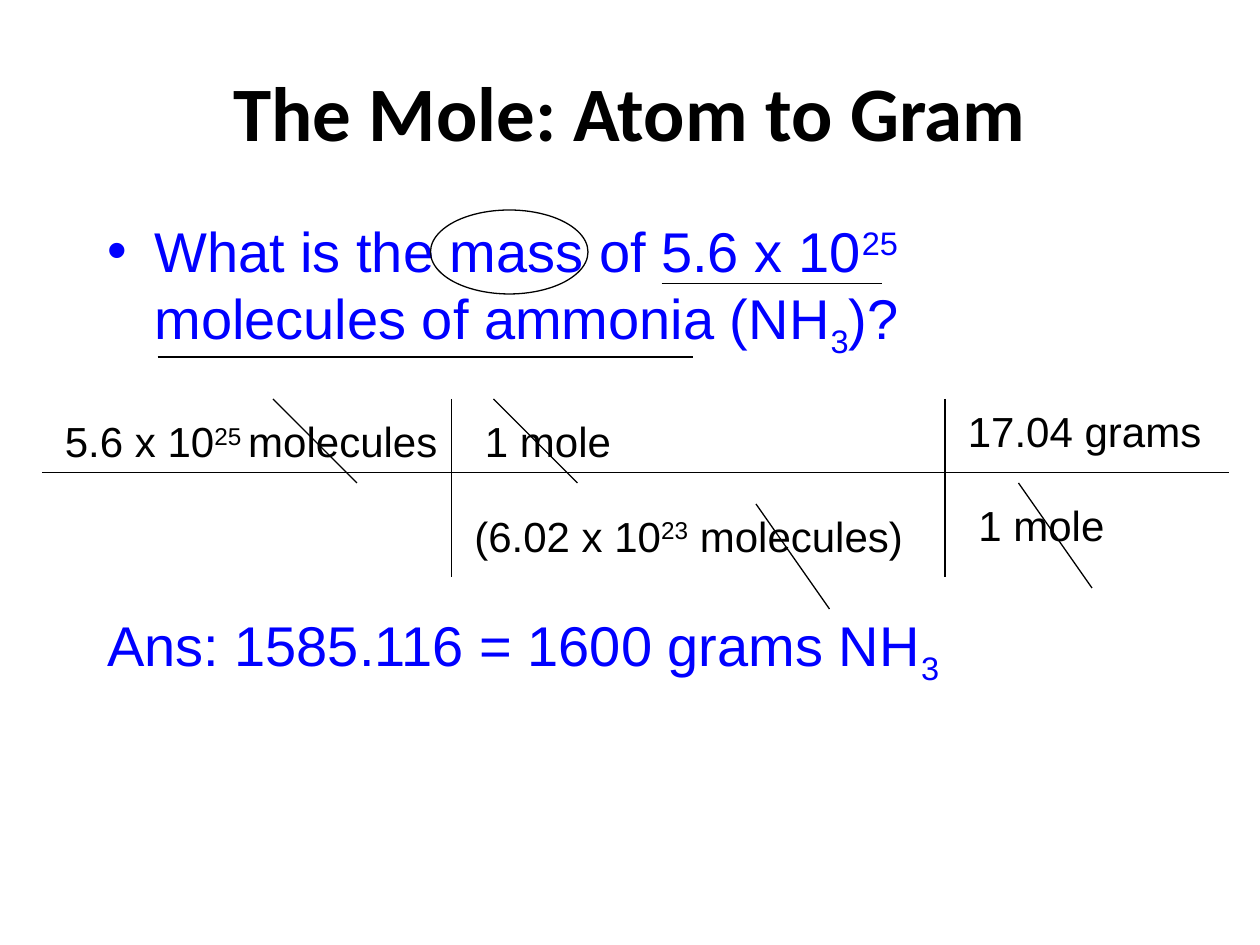
from lxml import etree
from pptx import Presentation
from pptx.dml.color import RGBColor
from pptx.enum.shapes import MSO_CONNECTOR, MSO_SHAPE
from pptx.enum.text import MSO_ANCHOR, MSO_AUTO_SIZE, PP_ALIGN
from pptx.oxml.ns import qn
from pptx.util import Pt

STRAIGHT = MSO_CONNECTOR.STRAIGHT
OVAL = MSO_SHAPE.OVAL
MIDDLE = MSO_ANCHOR.MIDDLE
CENTER = PP_ALIGN.CENTER
NO_AUTOFIT = MSO_AUTO_SIZE.NONE
GROW = MSO_AUTO_SIZE.SHAPE_TO_FIT_TEXT
BLACK, BLUE = "000000", "0000FF"
SUPERSCRIPT, SUBSCRIPT = "30000", "-25000"


def color(hex_string):
    return RGBColor.from_string(hex_string)


def add_runs(paragraph, pieces, size, hex_string):
    """Write (text, baseline) pieces as Arial runs."""
    for text, baseline in pieces:
        run = paragraph.add_run()
        run.text = text
        run.font.name = "Arial"
        run.font.size = Pt(size)
        run.font.color.rgb = color(hex_string)
        if baseline:
            run.font._element.set("baseline", baseline)


presentation = Presentation()
presentation.slide_width, presentation.slide_height = Pt(720), Pt(540)
slide = presentation.slides.add_slide(presentation.slide_layouts[1])

# Title
title = slide.shapes.title
title.left, title.top, title.width, title.height = Pt(54), Pt(18), Pt(612), Pt(90)
title.text_frame.text = "The Mole: Atom to Gram"
title.text_frame.vertical_anchor = MIDDLE
paragraph = title.text_frame.paragraphs[0]
paragraph.alignment = CENTER
font = paragraph.runs[0].font
font.name, font.size, font.bold = "Calibri", Pt(44), True
font.color.rgb = color(BLACK)

# Question and answer
body = slide.placeholders[1]
body.left, body.top, body.width, body.height = Pt(54), Pt(120), Pt(612), Pt(360)
body.text_frame.auto_size = NO_AUTOFIT
question = body.text_frame.paragraphs[0]
add_runs(question, [("What is the mass of 5.6 x 10", None), ("25", SUPERSCRIPT),
                    (" molecules of ammonia (NH", None), ("3", SUBSCRIPT),
                    (")?", None)], 32, BLUE)
answer = body.text_frame.add_paragraph()
add_runs(answer, [("Ans: 1585.116 = 1600 grams NH", None), ("3", SUBSCRIPT)], 32, BLUE)
answer.space_before = Pt(143)
properties = answer._p.get_or_add_pPr()
properties.set("marL", "0")
properties.set("indent", "0")
etree.SubElement(properties, qn("a:buNone"))

# Conversion factors: left, top, width, pieces
factors = [
    (30, 234, 264, [("5.6 x 10", None), ("25 ", SUPERSCRIPT), ("molecules", None)]),
    (264, 288, 318, [("(6.02 x 10", None), ("23", SUPERSCRIPT), (" molecules)", None)]),
    (270, 234, 264, [("1 mole", None)]),
    (552, 282, 264, [("1 mole", None)]),
    (546, 228, 264, [("17.04 grams", None)]),
]
for left, top, width, pieces in factors:
    box = slide.shapes.add_textbox(Pt(left), Pt(top), Pt(width), Pt(36.7))
    box.text_frame.word_wrap = True
    box.text_frame.auto_size = GROW
    add_runs(box.text_frame.paragraphs[0], pieces, 24, BLACK)

# Circle around the wanted quantity
circle = slide.shapes.add_shape(OVAL, Pt(246), Pt(120), Pt(90), Pt(48))
circle.shadow.inherit = False
circle.fill.background()
circle.line.color.rgb = color(BLACK)
circle.line.width = Pt(0.75)

# Lines: start x, start y, end x, end y
grid_lines = [(24, 270, 702, 270), (258, 228, 258, 330), (540, 228, 540, 330)]
underlines = [(378, 162, 504, 162), (90, 204, 396, 204)]
unit_strikes = [(156, 228, 204, 276), (282, 228, 330, 276),
                (432, 288, 474, 348), (582, 276, 624, 336)]
for ends in grid_lines + underlines + unit_strikes:
    line = slide.shapes.add_connector(STRAIGHT, *[Pt(value) for value in ends])
    line.line.color.rgb = color(BLACK)
    line.line.width = Pt(0.75)
    etree.SubElement(line._element.spPr, qn("a:effectLst"))

presentation.save("out.pptx")
